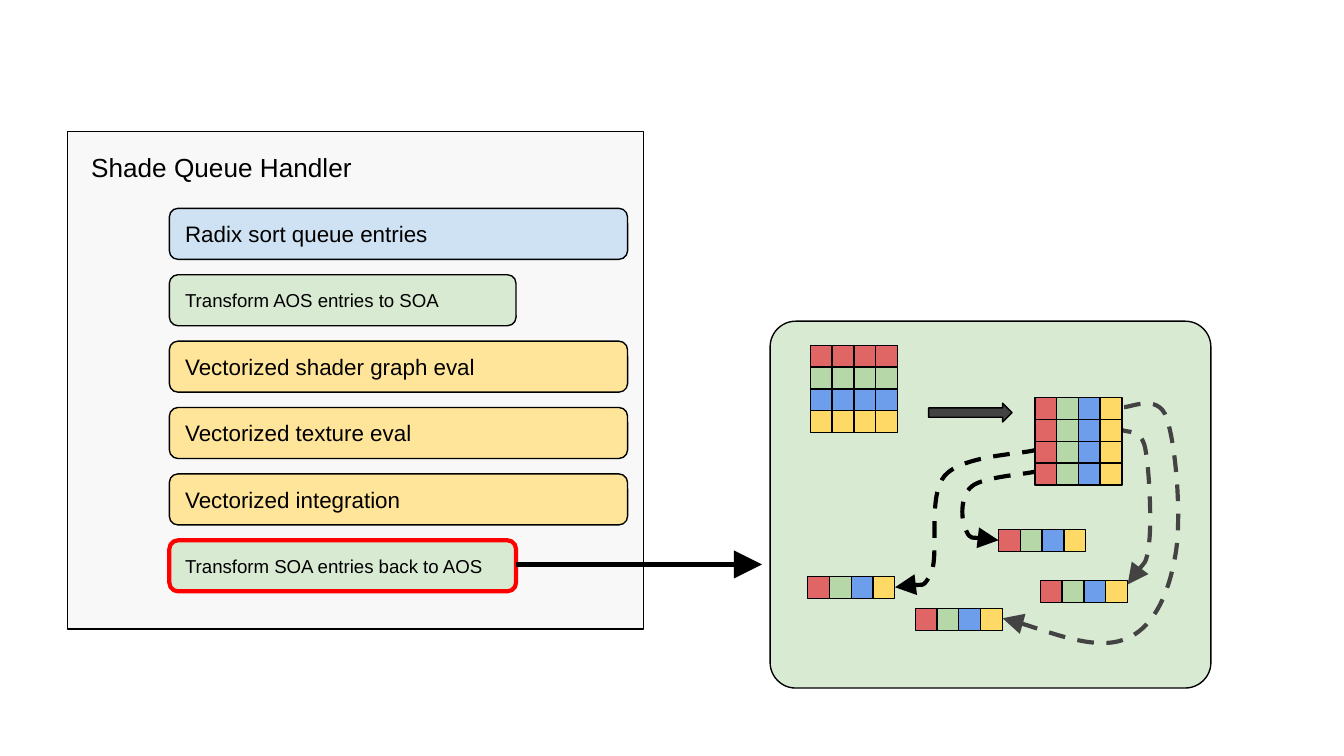
from itertools import chain

from lxml.etree import SubElement
from pptx import Presentation
from pptx.dml.color import RGBColor
from pptx.enum.dml import MSO_LINE
from pptx.enum.shapes import MSO_CONNECTOR, MSO_SHAPE as Preset
from pptx.enum.text import MSO_ANCHOR as Anchor, PP_ALIGN as Align
from pptx.oxml.ns import qn
from pptx.util import Inches, Pt

BLACK, RED_LINE, DARK_GRAY = "000000", "FF0000", "434343"
PALE_GRAY, PALE_BLUE, PALE_GREEN, PALE_YELLOW = "F8F8F8", "CFE2F3", "D9EAD3", "FFE599"
FIELD_COLORS = ["E06666", "B6D7A8", "6D9EEB", "FFD966"]
SQUARE = 1.62
COLUMNS, ROWS = 100, 56.25

STEPS = [
    ("Radix sort queue entries", PALE_BLUE, False),
    ("Transform AOS entries to SOA", PALE_GREEN, True),
    ("Vectorized shader graph eval", PALE_YELLOW, False),
    ("Vectorized texture eval", PALE_YELLOW, False),
    ("Vectorized integration", PALE_YELLOW, False),
    ("Transform SOA entries back to AOS", PALE_GREEN, True),
]
RECORDS = [(77.4, 43.2), (74.3, 39.4), (68.1, 45.3), (60.1, 42.9)]
SCATTER_CURVES = [
    (DARK_GRAY, [(83.9, 43.5), (84.2, 43), (85.3, 42.1), (85.5, 40.4), (85.7, 38.7),
                 (85.5, 34.7), (85.2, 33.3), (84.9, 31.9), (83.8, 32.2), (83.5, 32)]),
    (DARK_GRAY, [(74.6, 46), (76.1, 46.3), (81.4, 48.4), (83.6, 47.6), (85.7, 46.9),
                 (86.9, 44.4), (87.4, 41.6), (88, 38.9), (87.5, 33), (86.8, 31.1),
                 (86.2, 29.2), (84, 30.4), (83.5, 30.3)]),
    (BLACK, [(66.6, 43.7), (67, 43.5), (68.7, 43.9), (69.3, 42.6), (69.9, 41.2),
             (69, 36.9), (70.3, 35.4), (71.6, 33.9), (75.9, 33.8), (77, 33.5)]),
    (BLACK, [(74.3, 40.2), (73.9, 40.1), (72.2, 40.2), (71.9, 39.5), (71.5, 38.8),
             (71.4, 36.9), (72.3, 36.2), (73.1, 35.5), (76.2, 35.3), (77, 35.1)]),
]


def color(value):
    """Turn a hex string into a colour."""
    return RGBColor.from_string(value)


def grid(units):
    """Turn grid columns or rows into a length."""
    return Inches(units / 10)


def write(shape, text, size=12, font="Arial", fill=BLACK, anchor=Anchor.MIDDLE,
          align=Align.LEFT):
    """Put formatted text into a shape."""
    frame = shape.text_frame
    frame.word_wrap = True
    frame.vertical_anchor = anchor
    frame.margin_left = frame.margin_right = grid(1)
    frame.margin_top = frame.margin_bottom = grid(1)
    paragraph = frame.paragraphs[0]
    paragraph.alignment = align
    run = paragraph.add_run()
    run.text = text
    run.font.name = font
    run.font.size = Pt(size)
    run.font.color.rgb = color(fill)


class Canvas:
    """Holds the style and the current slide."""

    line_width = 0.75
    curve_width = 2.25
    arrow_width = 3

    def __init__(self, slide):
        """Start drawing on a slide."""
        self.shapes = slide.shapes

    def outline(self, shape, stroke, width):
        """Set the line of a shape."""
        shape.line.color.rgb = color(stroke)
        shape.line.width = Pt(width)

    def arrowhead(self, shape, end):
        """Add a large triangle to one end of a line."""
        SubElement(shape.line._get_or_add_ln(), qn(f"a:{end}"),
                   type="triangle", w="lg", len="lg")

    def box(self, left, top, width, height, fill, preset=Preset.RECTANGLE,
            corner=None, stroke=BLACK, weight=line_width):
        """Draw a filled preset shape."""
        shape = self.shapes.add_shape(preset, *map(grid, (left, top, width, height)))
        shape.shadow.inherit = False
        shape.fill.solid()
        shape.fill.fore_color.rgb = color(fill)
        self.outline(shape, stroke, weight)
        if corner is not None:
            shape.adjustments[0] = corner
        return shape

    def label(self, left, top, width, height, text, **style):
        """Draw a text box."""
        write(self.shapes.add_textbox(*map(grid, (left, top, width, height))), text, **style)

    def squares(self, left, top, rows=1, by_row=False):
        """Draw rows of four squares coloured by row or by column."""
        for row in range(rows):
            for column in range(len(FIELD_COLORS)):
                fill = FIELD_COLORS[row if by_row else column]
                self.box(left + column * SQUARE, top + row * SQUARE, SQUARE, SQUARE, fill)

    def curve(self, points, stroke):
        """Draw a dashed Bezier curve with its arrowhead at the start."""
        start, *rest = [(grid(x), grid(y)) for x, y in points]
        builder = self.shapes.build_freeform(*start)
        builder.add_line_segments(rest, close=False)
        shape = builder.convert_to_shape()
        outline_path = next(shape.element.iter(qn("a:path")))
        lines = outline_path.findall(qn("a:lnTo"))
        for first in range(0, len(lines), 3):
            bezier = SubElement(outline_path, qn("a:cubicBezTo"))
            for line in lines[first:first + 3]:
                bezier.append(line[0])
                outline_path.remove(line)
        shape.shadow.inherit = False
        shape.fill.background()
        self.outline(shape, stroke, self.curve_width)
        shape.line.dash_style = MSO_LINE.DASH
        self.arrowhead(shape, "headEnd")

    def arrow(self, start, end):
        """Draw a straight arrow."""
        connector = self.shapes.add_connector(
            MSO_CONNECTOR.STRAIGHT, *map(grid, chain(start, end)))
        self.outline(connector, BLACK, self.arrow_width)
        self.arrowhead(connector, "tailEnd")
        SubElement(connector.element.spPr, qn("a:effectLst"))


def draw_handler(canvas):
    """Draw the handler panel and its steps."""
    canvas.box(5, 9.8, 42.9, 37, PALE_GRAY)
    canvas.label(5.8, 10.3, 29.4, 4.1, "Shade Queue Handler", size=14, anchor=Anchor.TOP)
    for index, (text, fill, is_transform) in enumerate(STEPS):
        is_last = index == len(STEPS) - 1
        step = canvas.box(12.6, 15.5 + index * 4.94, 25.8 if is_transform else 34.1, 3.8, fill,
                          Preset.ROUNDED_RECTANGLE, corner=0.17,
                          stroke=RED_LINE if is_last else BLACK,
                          weight=2.25 if is_last else canvas.line_width)
        write(step, text, size=10 if is_transform else 12)


def draw_transform(canvas):
    """Draw the panel that scatters entries back into records."""
    canvas.box(57.3, 23.9, 32.8, 27.3, PALE_GREEN, Preset.ROUNDED_RECTANGLE, corner=0.07)
    canvas.squares(60.3, 25.7, rows=4, by_row=True)
    canvas.box(69.1, 30, 6.2, 1.4, DARK_GRAY, Preset.RIGHT_ARROW)
    for stroke, points in SCATTER_CURVES:
        canvas.curve(points, stroke)
    canvas.squares(77, 29.6, rows=4)
    for left, top in RECORDS:
        canvas.squares(left, top)


def main():
    """Build the slide and save it."""
    presentation = Presentation()
    presentation.slide_width, presentation.slide_height = grid(COLUMNS), grid(ROWS)
    canvas = Canvas(presentation.slides.add_slide(presentation.slide_layouts[6]))
    draw_transform(canvas)
    draw_handler(canvas)
    canvas.arrow((38.4, 42), (56.7, 42))
    presentation.save("out.pptx")


if __name__ == "__main__":
    main()
